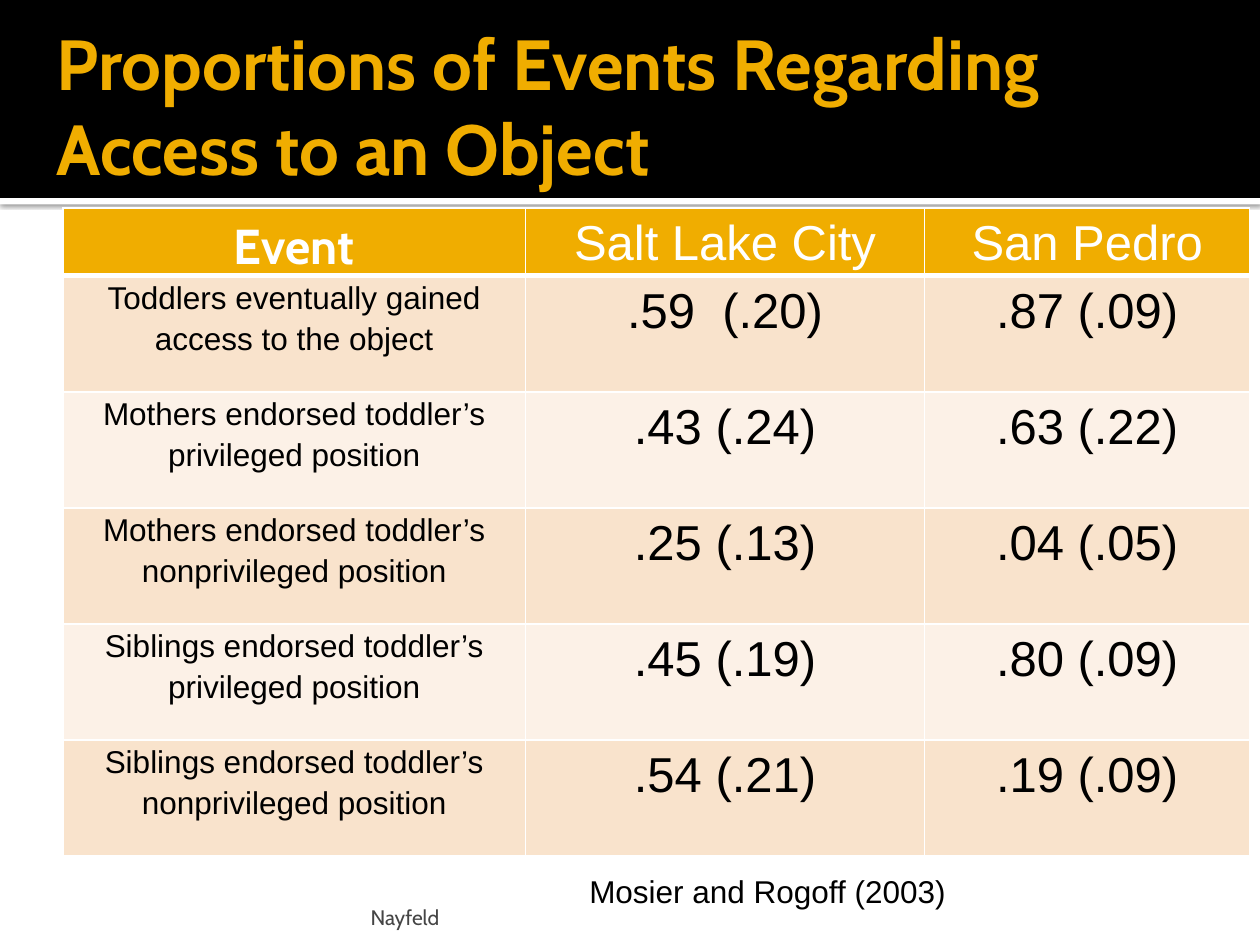
from lxml.etree import SubElement
from pptx import Presentation
from pptx.dml.color import RGBColor
from pptx.enum.shapes import MSO_SHAPE
from pptx.enum.text import MSO_ANCHOR, PP_ALIGN
from pptx.oxml import parse_xml
from pptx.oxml.ns import nsdecls, qn
from pptx.util import Cm, Pt

# Content
TITLE = "Proportions of Events Regarding Access to an Object"
HEADER = ["Event", "Salt Lake City", "San Pedro"]
ROWS = [
    (["Toddlers eventually gained access to the object"], ".59  (.20)", ".87 (.09)"),
    (["Mothers endorsed toddler’s", "privileged position"], ".43 (.24)", ".63 (.22)"),
    (["Mothers endorsed toddler’s", "nonprivileged position"], ".25 (.13)", ".04 (.05)"),
    (["Siblings endorsed toddler’s", "privileged position"], ".45 (.19)", ".80 (.09)"),
    (["Siblings endorsed toddler’s", "nonprivileged position"], ".54 (.21)", ".19 (.09)"),
]
CITATION = "Mosier and Rogoff (2003)"
FOOTER = "Nayfeld"

COLORS = {
    "black": "000000", "white": "FFFFFF", "gold": "F0AD00",
    "footer": "454545", "dark band": "F9E3CC", "light band": "FCF1E7",
}
COLUMN_WIDTHS = [9.32, 8.05, 6.55]
HEADER_HEIGHT, ROW_HEIGHT = 1.37, 2.34


def color(name):
    return RGBColor.from_string(COLORS[name])


def add_run(paragraph, text, size, font_name, color_name, bold=False):
    run = paragraph.add_run()
    run.text = text
    run.font.size = Pt(size)
    run.font.name = font_name
    run.font.bold = bold
    run.font.color.rgb = color(color_name)


def add_band(slide, top, height, color_name):
    band = slide.shapes.add_shape(MSO_SHAPE.RECTANGLE, 0, Cm(top), Cm(25.4), Cm(height))
    band.shadow.inherit = False
    band.fill.solid()
    band.fill.fore_color.rgb = color(color_name)
    band.line.fill.background()
    return band


def add_label(slide, box, insets, anchor, *run_style):
    label = slide.shapes.add_textbox(*[Cm(length) for length in box])
    frame = label.text_frame
    frame.word_wrap = True
    frame.vertical_anchor = anchor
    (frame.margin_left, frame.margin_top,
     frame.margin_right, frame.margin_bottom) = [Cm(inset) for inset in insets]
    add_run(frame.paragraphs[0], *run_style)


def add_borders(cell, bottom_width):
    properties = cell._tc.get_or_add_tcPr()
    widths = {"lnL": 1, "lnR": 1, "lnT": 1, "lnB": bottom_width}
    for index, (side, width) in enumerate(widths.items()):
        border = parse_xml(f'<a:{side} {nsdecls("a")} w="{Pt(width)}"/>')
        fill = SubElement(border, qn("a:solidFill"))
        SubElement(fill, qn("a:srgbClr"), val=COLORS["white"])
        properties.insert(index, border)


def fill_cell(cell, lines, fill_name, bottom_width, *run_style):
    cell.margin_left = cell.margin_right = Cm(0.18)
    cell.margin_top = cell.margin_bottom = 0
    cell.fill.solid()
    cell.fill.fore_color.rgb = color(fill_name)
    add_borders(cell, bottom_width)
    frame = cell.text_frame
    for index, line in enumerate(lines):
        paragraph = frame.add_paragraph() if index else frame.paragraphs[0]
        paragraph.alignment = PP_ALIGN.CENTER
        paragraph.line_spacing = 1.15
        add_run(paragraph, line, *run_style)


presentation = Presentation()
presentation.slide_width, presentation.slide_height = Cm(25.4), Cm(19.05)
slide = presentation.slides.add_slide(presentation.slide_layouts[6])

# Title band with a shadowed white strip below it
strip = add_band(slide, 3.99, 0.13, "white")
effects = strip._element.spPr.find(qn("a:effectLst"))
shadow = SubElement(effects, qn("a:outerShdw"), blurRad=str(Pt(2.5)),
                    dist=str(Pt(0.8)), dir="5400000", algn="tl", rotWithShape="0")
shadow_color = SubElement(shadow, qn("a:srgbClr"), val=COLORS["black"])
SubElement(shadow_color, qn("a:alpha"), val="60000")
add_band(slide, 0, 3.99, "black")
add_label(slide, (0.89, 0.1, 24, 4.01), (0.25, 0.13, 0.13, 0.13), MSO_ANCHOR.MIDDLE,
          TITLE, 40.5, "Cabin", "gold", True)

# Footer
add_label(slide, (7.34, 17.98, 15.29, 0.76), (0.13, 0.13, 0.13, 0), MSO_ANCHOR.BOTTOM,
          FOOTER, 12, "Cabin", "footer")

# Table of proportions
table = slide.shapes.add_table(
    len(ROWS) + 1, len(HEADER), Cm(1.27), Cm(4.19), Cm(sum(COLUMN_WIDTHS)),
    Cm(HEADER_HEIGHT + ROW_HEIGHT * len(ROWS))).table
for column, width in zip(table.columns, COLUMN_WIDTHS):
    column.width = Cm(width)
for index, row in enumerate(table.rows):
    row.height = Cm(ROW_HEIGHT if index else HEADER_HEIGHT)

for column_index, heading in enumerate(HEADER):
    is_event = column_index == 0
    fill_cell(table.cell(0, column_index), [heading], "gold", 3,
              28, "Cabin" if is_event else "Arial", "white", is_event)
for row_index, (event, *values) in enumerate(ROWS, start=1):
    band_name = "dark band" if row_index % 2 else "light band"
    fill_cell(table.cell(row_index, 0), event, band_name, 1, 18, "Arial", "black")
    for column_index, value in enumerate(values, start=1):
        fill_cell(table.cell(row_index, column_index), [value], band_name, 1,
                  28, "Arial", "black")

# Citation
add_label(slide, (11.63, 17.45, 14.15, 1.02), (0.25, 0.13, 0.25, 0.13), MSO_ANCHOR.TOP,
          CITATION, 18, "Arial", "black")

presentation.save("out.pptx")
